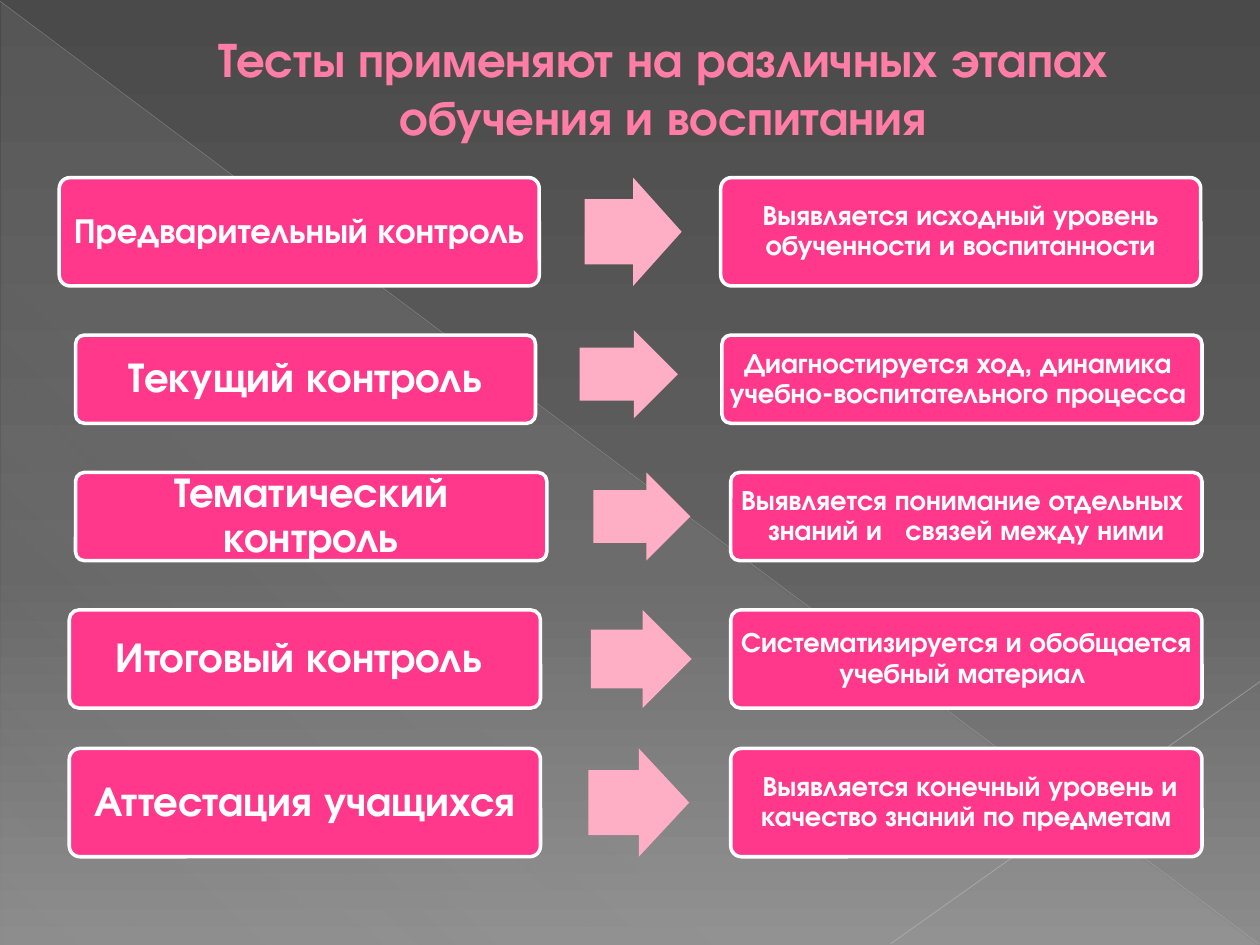
from typing import NamedTuple

from lxml.etree import SubElement
from pptx import Presentation
from pptx.dml.color import RGBColor
from pptx.enum.shapes import MSO_CONNECTOR, MSO_SHAPE
from pptx.enum.text import MSO_ANCHOR, MSO_AUTO_SIZE, PP_ALIGN
from pptx.oxml.ns import qn
from pptx.util import Inches, Pt

FONT = "TeX Gyre Adventor"
WHITE = RGBColor(0xFF, 0xFF, 0xFF)
PINK = RGBColor(0xFF, 0x38, 0x8C)
LIGHT_PINK = RGBColor(0xFF, 0xAF, 0xC5)
TITLE_PINK = RGBColor(0xFF, 0x7D, 0xA7)
TITLE_OUTLINE = RGBColor(0xB1, 0x27, 0x61)
DARK_GRAY = RGBColor(0x4A, 0x4A, 0x4A)
MID_GRAY = RGBColor(0x62, 0x62, 0x62)
LIGHT_GRAY = RGBColor(0x8C, 0x8C, 0x8C)
SHEEN = RGBColor(0xD2, 0xD2, 0xD2)
RAY_LONG = RGBColor(0xBF, 0xBF, 0xBF)
RAY_SHORT = RGBColor(0xC6, 0xC6, 0xC6)


class Span(NamedTuple):
    left: float
    width: float


class Stage(NamedTuple):
    top: float
    height: float
    control: Span
    arrow: Span
    arrow_top: float
    result: Span
    control_text: str
    control_size: int
    result_text: str


class Stop(NamedTuple):
    position: int
    color: RGBColor
    opacity: int = 100


STAGES = [
    Stage(1.41, 0.86, Span(0.47, 3.81), Span(4.64, 0.77), 1.41, Span(5.72, 3.81),
          "Предварительный контроль", 20,
          "Выявляется исходный уровень обученности и воспитанности"),
    Stage(2.66, 0.7, Span(0.6, 3.65), Span(4.6, 0.78), 2.62, Span(5.73, 3.81),
          "Текущий контроль", 24,
          "Диагностируется ход, динамика  учебно-воспитательного процесса "),
    Stage(3.75, 0.7, Span(0.6, 3.74), Span(4.71, 0.77), 3.75, Span(5.8, 3.74),
          "Тематический контроль", 24,
          "Выявляется понимание отдельных  знаний и   связей между ними"),
    Stage(4.84, 0.78, Span(0.55, 3.74), Span(4.69, 0.8), 4.84, Span(5.8, 3.74),
          "Итоговый контроль ", 24,
          "Систематизируется и обобщается учебный материал "),
    Stage(5.94, 0.86, Span(0.55, 3.74), Span(4.67, 0.8), 5.94, Span(5.8, 3.74),
          "Аттестация учащихся", 24,
          " Выявляется конечный уровень и качество знаний по предметам"),
]


def set_opacity(color_element, percent: int) -> None:
    if percent < 100:
        SubElement(color_element, qn("a:alpha"), val=str(percent * 1000))


def set_gradient(fill, owner, stops: list[Stop], angle: int) -> None:
    """Give the fill inside the owner element a linear gradient, angle clockwise."""
    fill.gradient()
    gradient = next(owner.iter(qn("a:gradFill")))
    stop_list = gradient.find(qn("a:gsLst"))
    for old_stop in list(stop_list):
        stop_list.remove(old_stop)
    for stop in stops:
        entry = SubElement(stop_list, qn("a:gs"), pos=str(stop.position * 1000))
        color = SubElement(entry, qn("a:srgbClr"), val=str(stop.color))
        set_opacity(color, stop.opacity)
    gradient.find(qn("a:lin")).set("ang", str(angle * 60000))


def add_ray(page, start: tuple, end: tuple, color: RGBColor, width: float, opacity: int) -> None:
    ray = page.shapes.add_connector(
        MSO_CONNECTOR.STRAIGHT, *(Inches(value) for value in (*start, *end)))
    ray.line.width = Pt(width)
    ray.line.color.rgb = color
    set_opacity(next(ray.line._ln.iter(qn("a:srgbClr"))), opacity)
    SubElement(ray._element.spPr, qn("a:effectLst"))


def add_backdrop(page) -> None:
    set_gradient(page.background.fill, page._element,
                 [Stop(0, DARK_GRAY), Stop(60, MID_GRAY), Stop(100, LIGHT_GRAY)], 90)
    triangle = page.shapes.add_shape(
        MSO_SHAPE.RIGHT_TRIANGLE, Inches(0.01), Inches(0.02), Inches(9.98), Inches(7.48))
    triangle.shadow.inherit = False
    triangle.line.fill.background()
    set_gradient(triangle.fill, triangle._element,
                 [Stop(0, SHEEN, 10), Stop(70, SHEEN, 8), Stop(100, SHEEN, 1)], 133)
    add_ray(page, (0, 0.01), (9.99, 7.49), RAY_LONG, 0.39, 35)
    add_ray(page, (10, 5.41), (7.07, 7.49), RAY_SHORT, 0.47, 45)


def add_text(para, text: str, size: int, color: RGBColor):
    para.alignment = PP_ALIGN.CENTER
    span = para.add_run()
    span.text = text
    span.font.name = FONT
    span.font.size = Pt(size)
    span.font.bold = True
    span.font.color.rgb = color
    return span


def format_title(title, text: str) -> None:
    title.left, title.top = Inches(0.5), Inches(0.29)
    title.width, title.height = Inches(9), Inches(0.8)
    frame = title.text_frame
    frame.auto_size = MSO_AUTO_SIZE.NONE
    frame.vertical_anchor = MSO_ANCHOR.MIDDLE
    para = frame.paragraphs[0]
    span = add_text(para, text, 28, TITLE_PINK)
    properties = para._p.get_or_add_pPr()
    properties.set("marL", str(Inches(0.53)))
    properties.set("indent", "0")
    # Thin outline around the letters
    outline = SubElement(span.font._element, qn("a:ln"), w=str(Pt(0.5)))
    fill = SubElement(outline, qn("a:solidFill"))
    SubElement(fill, qn("a:srgbClr"), val=str(TITLE_OUTLINE))
    span.font._element.insert(0, outline)


def add_panel(shapes, kind, place: Span, top: float, height: float, color: RGBColor):
    panel = shapes.add_shape(
        kind, Inches(place.left), Inches(top), Inches(place.width), Inches(height))
    panel.shadow.inherit = False
    panel.fill.solid()
    panel.fill.fore_color.rgb = color
    panel.line.fill.background()
    return panel


def add_box(shapes, place: Span, stage: Stage, text: str, size: int) -> None:
    box = add_panel(shapes, MSO_SHAPE.ROUNDED_RECTANGLE, place, stage.top, stage.height, PINK)
    box.adjustments[0] = 0.1
    box.line.color.rgb = WHITE
    box.line.width = Pt(2)
    frame = box.text_frame
    frame.word_wrap = True
    frame.vertical_anchor = MSO_ANCHOR.MIDDLE
    margin = Inches(0.0025 * size)
    frame.margin_left = frame.margin_right = margin
    frame.margin_top = frame.margin_bottom = margin
    para = frame.paragraphs[0]
    para.line_spacing = 0.9
    add_text(para, text, size, WHITE)


def add_stage(page, stage: Stage) -> None:
    shapes = page.shapes.add_group_shape().shapes
    add_box(shapes, stage.control, stage, stage.control_text, stage.control_size)
    arrow = add_panel(shapes, MSO_SHAPE.RIGHT_ARROW, stage.arrow,
                      stage.arrow_top, stage.height, LIGHT_PINK)
    arrow.adjustments[0] = 0.6
    arrow.adjustments[1] = 0.5
    add_box(shapes, stage.result, stage, stage.result_text, 16)


def main() -> None:
    deck = Presentation()
    deck.slide_width, deck.slide_height = Inches(10), Inches(7.5)
    page = deck.slides.add_slide(deck.slide_layouts[5])
    add_backdrop(page)

    # Title, brought in front of the backdrop
    title = page.shapes.title
    title._element.getparent().append(title._element)
    format_title(title, "Тесты применяют на различных этапах обучения и воспитания")

    # One row per stage of control
    for stage in STAGES:
        add_stage(page, stage)
    deck.save("out.pptx")


if __name__ == "__main__":
    main()
